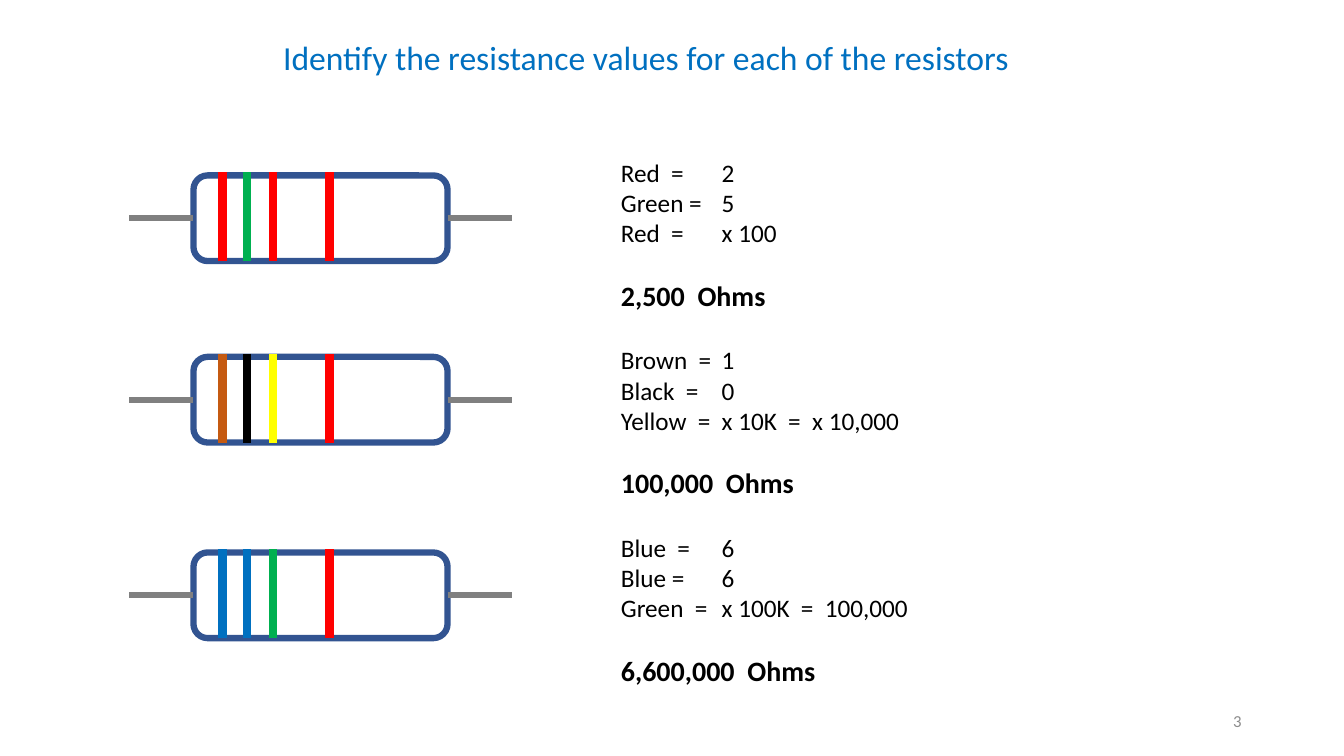
"""Build a slide that reads resistance values from resistor colour bands."""
from lxml import etree
from pptx import Presentation
from pptx.dml.color import RGBColor
from pptx.enum.shapes import MSO_CONNECTOR, MSO_SHAPE
from pptx.enum.text import MSO_ANCHOR, MSO_AUTO_SIZE, PP_ALIGN
from pptx.oxml.ns import qn
from pptx.util import Pt

STRAIGHT = MSO_CONNECTOR.STRAIGHT
ROUNDED = MSO_SHAPE.ROUNDED_RECTANGLE
TOP, MIDDLE = MSO_ANCHOR.TOP, MSO_ANCHOR.MIDDLE
LEFT, RIGHT = PP_ALIGN.LEFT, PP_ALIGN.RIGHT
NO_FIT = MSO_AUTO_SIZE.NONE

NAVY = RGBColor(0x32, 0x54, 0x91)
GRAY = RGBColor(0x80, 0x80, 0x80)
LIGHT_GRAY = RGBColor(0x8C, 0x8C, 0x8C)
RED = RGBColor(0xFF, 0x00, 0x00)
GREEN = RGBColor(0x00, 0xB0, 0x50)
BROWN = RGBColor(0xC5, 0x5A, 0x11)
BLACK = RGBColor(0x00, 0x00, 0x00)
YELLOW = RGBColor(0xFF, 0xFF, 0x00)
BLUE = RGBColor(0x00, 0x70, 0xC0)

COMPARISON_LAYOUT = 4
BODY_LEFT, BODY_WIDTH, BODY_HEIGHT = 138.2, 181.5, 61.2
LEAD_LENGTH = 45.7
BAND_XS = (159, 176.5, 195, 235.5)
BAND_RISE = 2.2
ANSWER_TOP, ANSWER_PITCH = 108.7, 133.9
VALUE_TAB = 72

RESISTORS = (
    (125.3, (RED, GREEN, RED, RED),
     ("Red  =\t2", "Green =\t5", "Red  = \tx 100"), "2,500  Ohms"),
    (254.9, (BROWN, BLACK, YELLOW, RED),
     ("Brown  =\t1", "Black  =\t0", "Yellow  = \tx 10K  =  x 10,000"),
     "100,000  Ohms"),
    (394.6, (BLUE, BLUE, GREEN, RED),
     ("Blue  =\t6", "Blue =\t6", "Green  = \tx 100K  =  100,000"),
     "6,600,000  Ohms"),
)


class ResistorSlide:
    """Holds the text style and the slide being drawn."""

    font_name = "Calibri"

    def __init__(self, slide):
        self.slide = slide

    def place(self, holder, left, top, width, height, anchor=TOP):
        box = {"left": left, "top": top, "width": width, "height": height}
        for key, value in box.items():
            setattr(holder, key, Pt(value))
        frame = holder.text_frame
        layout = {"word_wrap": True, "auto_size": NO_FIT,
                  "vertical_anchor": anchor}
        for key, value in layout.items():
            setattr(frame, key, value)
        return frame

    def add_text(self, paragraph, text, size, color, bold=False, align=LEFT,
                 before=0):
        spacing = {"alignment": align, "space_before": Pt(before),
                   "line_spacing": 1.0}
        for key, value in spacing.items():
            setattr(paragraph, key, value)
        run = paragraph.add_run()
        run.text = text
        style = {"name": self.font_name, "size": Pt(size), "bold": bold}
        for key, value in style.items():
            setattr(run.font, key, value)
        run.font.color.rgb = color

    def title(self, text):
        frame = self.place(self.slide.shapes.title, 195, 23, 551, 36)
        self.add_text(frame.paragraphs[0], text, 24, BLUE)

    def page_number(self, text):
        number = self.slide.shapes.add_textbox(0, 0, 0, 0)
        frame = self.place(number, 678, 500.4, 216, 28.8, MIDDLE)
        self.add_text(frame.paragraphs[0], text, 12, LIGHT_GRAY, align=RIGHT)

    def answer(self, holder, top, steps, total):
        frame = self.place(holder, 436.3, top, 328.3, 118.8)
        for position, step in enumerate(steps):
            paragraph = frame.add_paragraph() if position else frame.paragraphs[0]
            self.add_text(paragraph, step, 18, BLACK)
        self.add_text(frame.add_paragraph(), total, 20, BLACK, bold=True,
                      before=21.6)
        for paragraph in frame.paragraphs:
            self.plain_list(paragraph)

    def plain_list(self, paragraph):
        properties = paragraph._p.get_or_add_pPr()
        for key in ("marL", "indent"):
            properties.set(key, "0")
        etree.SubElement(properties, qn("a:buNone"))
        tabs = etree.SubElement(properties, qn("a:tabLst"))
        etree.SubElement(tabs, qn("a:tab"), pos=str(Pt(VALUE_TAB)), algn="l")

    def line(self, group, start, end, color, width):
        points = [Pt(value) for value in (*start, *end)]
        connector = group.shapes.add_connector(STRAIGHT, *points)
        connector.line.color.rgb = color
        connector.line.width = Pt(width)
        etree.SubElement(connector._element.spPr, qn("a:effectLst"))

    def resistor(self, top, bands):
        group = self.slide.shapes.add_group_shape()
        body = group.shapes.add_shape(
            ROUNDED, Pt(BODY_LEFT), Pt(top), Pt(BODY_WIDTH), Pt(BODY_HEIGHT))
        body.shadow.inherit = False
        body.fill.background()
        body.line.color.rgb = NAVY
        body.line.width = Pt(4.5)
        middle = top + BODY_HEIGHT / 2
        for lead in (BODY_LEFT + BODY_WIDTH, BODY_LEFT - LEAD_LENGTH):
            self.line(group, (lead, middle), (lead + LEAD_LENGTH, middle),
                      GRAY, 4.5)
        for x, color in zip(BAND_XS, bands):
            self.line(group, (x, top - BAND_RISE), (x, top + BODY_HEIGHT),
                      color, 6)


def main():
    deck = Presentation()
    deck.slide_width, deck.slide_height = Pt(960), Pt(540)
    slide = deck.slides.add_slide(deck.slide_layouts[COMPARISON_LAYOUT])
    page = ResistorSlide(slide)
    page.title("Identify the resistance values for each of the resistors")
    for index, (top, bands, steps, total) in enumerate(RESISTORS):
        page.resistor(top, bands)
        page.answer(slide.placeholders[index + 1],
                    ANSWER_TOP + index * ANSWER_PITCH, steps, total)
    page.page_number("3")
    unused = slide.placeholders[len(RESISTORS) + 1].element
    unused.getparent().remove(unused)
    deck.save("out.pptx")


if __name__ == "__main__":
    main()
